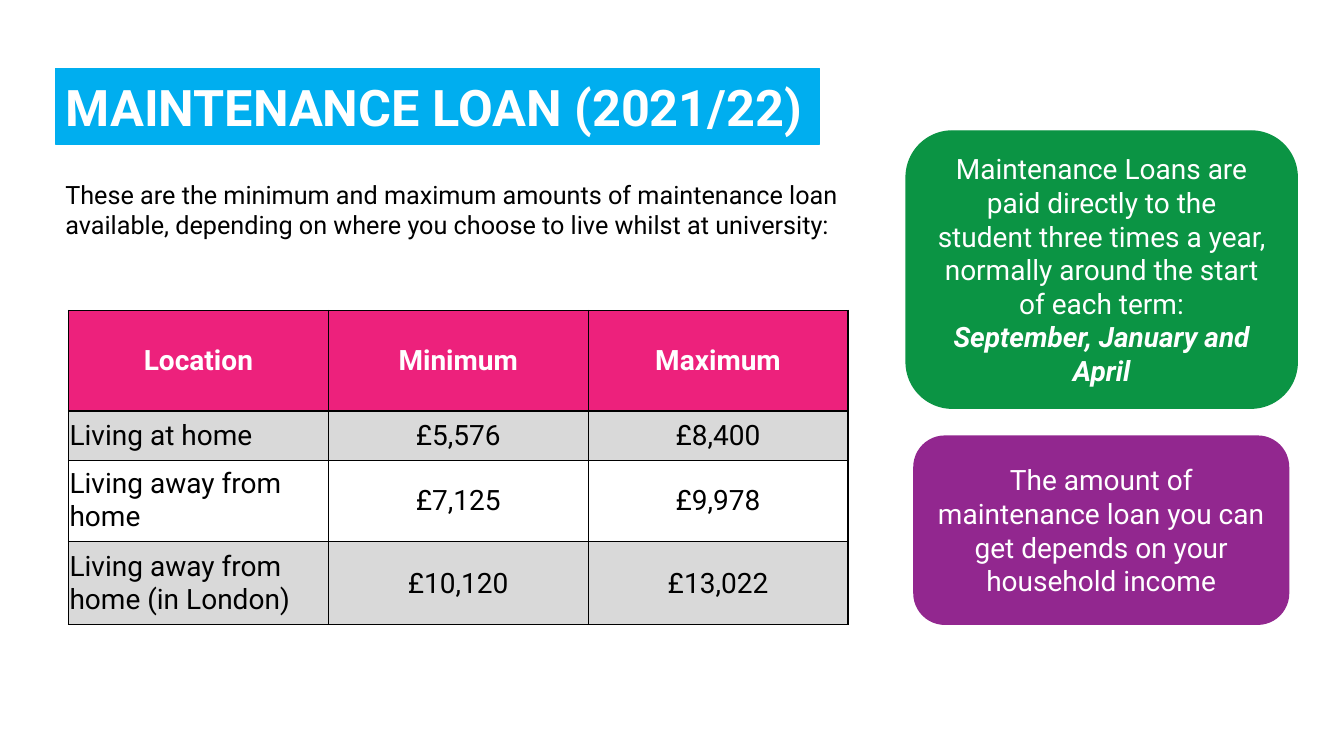
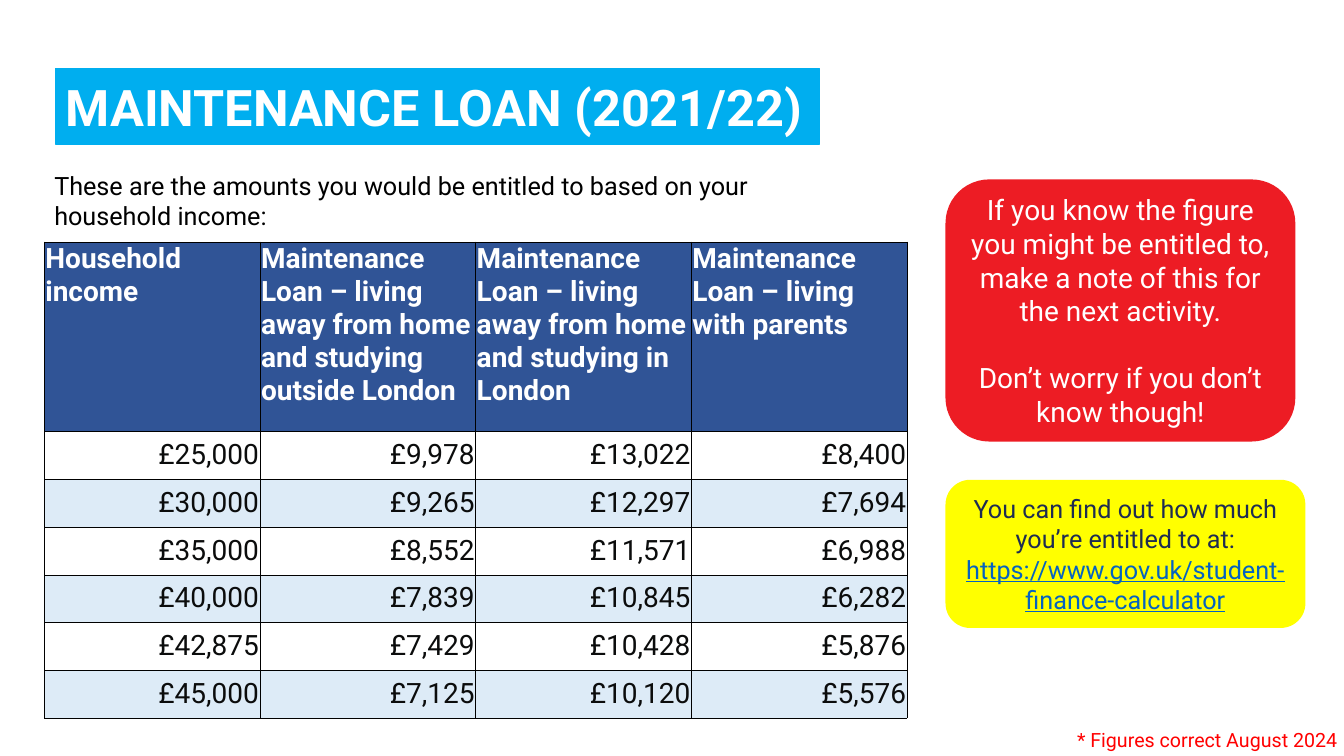
import lxml.etree
import pptx
import pptx.dml.color
import pptx.enum.shapes
import pptx.enum.text
import pptx.oxml.ns
import pptx.util

COLORS = {
    "title": "00AEEF", "green": "0B9444", "purple": "92278F", "red": "ED1C24",
    "yellow": "FFFF00", "pink": "ED217C", "grey": "D9D9D9", "navy": "305496",
    "ice": "DDEBF7", "white": "FFFFFF", "black": "000000", "ink": "0B0C0C",
    "deep": "1E2C52", "link": "0563C1", "alert": "FF0000",
}
FONT = "Roboto"
NO_BREAK_SPACE = chr(160)
SLIDE_W, SLIDE_H = pptx.util.Inches(13.33), pptx.util.Inches(7.5)
TITLE_BAND = (4.13, 9.07, 56.85, 10)
ALIGN = pptx.enum.text.PP_ALIGN
ANCHOR = pptx.enum.text.MSO_ANCHOR

LOAN_RANGES = [
    ("Location", "Minimum", "Maximum"),
    ("Living at home", "£5,576", "£8,400"),
    ("Living away from home", "£7,125", "£9,978"),
    ("Living away from home (in London)", "£10,120", "£13,022"),
]
INCOME_BANDS = [
    ("Household income",
     "Maintenance Loan – living away from home and studying outside London",
     "Maintenance Loan – living away from home and studying in London",
     "Maintenance Loan – living with parents"),
    ("£25,000", "£9,978", "£13,022", "£8,400"),
    ("£30,000", "£9,265", "£12,297", "£7,694"),
    ("£35,000", "£8,552", "£11,571", "£6,988"),
    ("£40,000", "£7,839", "£10,845", "£6,282"),
    ("£42,875", "£7,429", "£10,428", "£5,876"),
    ("£45,000", "£7,125", "£10,120", "£5,576"),
]


def rgb(name):
    """Return the named palette colour."""
    return pptx.dml.color.RGBColor.from_string(COLORS[name])


def place(box):
    """Turn a box in percent of the slide into lengths."""
    left, top, width, height = box
    return (int(SLIDE_W * left / 100), int(SLIDE_H * top / 100),
            int(SLIDE_W * width / 100), int(SLIDE_H * height / 100))


def write(frame, *lines, **shared):
    """Write lines, each a string or a (string, format) pair, into a text frame."""
    for index, line in enumerate(lines):
        text, own = (line, {}) if isinstance(line, str) else line
        style = {**shared, **own}
        paragraph = frame.paragraphs[0] if index == 0 else frame.add_paragraph()
        paragraph.alignment = style.get("align", ALIGN.LEFT)
        if "before" in style:
            paragraph.space_before = pptx.util.Pt(style["before"])
        run = paragraph.add_run()
        run.text = text
        run.font.name = FONT
        run.font.size = pptx.util.Pt(style.get("size", 20))
        run.font.color.rgb = rgb(style.get("color", "black"))
        run.font.bold = style.get("bold", False)
        run.font.italic = style.get("italic", False)
        run.font.underline = style.get("underline", False)


def paint(shape, color, outlined):
    """Fill a shape and give it a matching outline or none."""
    shape.fill.solid()
    shape.fill.fore_color.rgb = rgb(color)
    if outlined:
        shape.line.color.rgb = rgb(color)
        shape.line.width = pptx.util.Pt(1)
    else:
        shape.line.fill.background()


def add_titled_slide(deck, heading):
    """Add a slide with the heading in the shared title band."""
    slide = deck.slides.add_slide(deck.slide_layouts[5])
    title = slide.shapes.title
    title.left, title.top, title.width, title.height = place(TITLE_BAND)
    paint(title, "title", True)
    title.text_frame.auto_size = pptx.enum.text.MSO_AUTO_SIZE.NONE
    title.text_frame.vertical_anchor = ANCHOR.MIDDLE
    write(title.text_frame, heading, size=36, color="white", bold=True)
    return slide


def add_text(slide, box, text, right_margin=0.1, **style):
    """Add a wrapped text box."""
    frame = slide.shapes.add_textbox(*place(box)).text_frame
    frame.word_wrap = True
    frame.margin_right = pptx.util.Inches(right_margin)
    write(frame, text, **style)


def add_callout(slide, box, fill, *lines, outlined=False, **style):
    """Add a rounded callout with centred text."""
    callout = slide.shapes.add_shape(
        pptx.enum.shapes.MSO_SHAPE.ROUNDED_RECTANGLE, *place(box))
    callout.shadow.inherit = False
    paint(callout, fill, outlined)
    callout.text_frame.word_wrap = True
    callout.text_frame.vertical_anchor = ANCHOR.MIDDLE
    write(callout.text_frame, *lines, **{"align": ALIGN.CENTER, "color": "white", **style})


def add_borders(cell, points):
    """Draw black borders on all four sides of a cell."""
    properties = cell._tc.get_or_add_tcPr()
    qn = pptx.oxml.ns.qn
    for side in ("a:lnL", "a:lnR", "a:lnT", "a:lnB"):
        border = lxml.etree.SubElement(
            properties, qn(side), w=str(int(pptx.util.Pt(points))))
        fill = lxml.etree.SubElement(border, qn("a:solidFill"))
        lxml.etree.SubElement(fill, qn("a:srgbClr"), val=COLORS["black"])


def format_cell(cell, text, fill, border, anchor, padded, **style):
    """Set the borders, fill, margins and text of one cell."""
    add_borders(cell, border)
    cell.fill.solid()
    cell.fill.fore_color.rgb = rgb(fill)
    cell.vertical_anchor = anchor
    cell.margin_left = cell.margin_right = pptx.util.Inches(0.01)
    cell.margin_top = pptx.util.Inches(0.07 if padded else 0.01)
    cell.margin_bottom = pptx.util.Inches(0.07 if padded else 0)
    write(cell.text_frame, text, **style)


def add_loan_table(slide, box, rows, weights, header, bands, aligns, head_align,
                   anchor, border, ink):
    """Add a table whose rows share the box height by weight."""
    left, top, width, height = place(box)
    columns = len(rows[0])
    table = slide.shapes.add_table(len(rows), columns, left, top, width, height).table
    table.horz_banding = False
    for column in table.columns:
        column.width = width // columns
    for r, (values, weight) in enumerate(zip(rows, weights)):
        table.rows[r].height = int(height * weight / sum(weights))
        for c, value in enumerate(values):
            is_head = r == 0
            align = head_align if is_head else aligns[c]
            format_cell(table.cell(r, c), value,
                        header if is_head else bands[(r - 1) % 2], border, anchor,
                        padded=not is_head and align != ALIGN.CENTER,
                        align=align, bold=is_head, color="white" if is_head else ink)


def build_range_slide(deck):
    """Build the slide of minimum and maximum loans."""
    slide = add_titled_slide(deck, "MAINTENANCE LOAN (2021/22)")
    add_callout(
        slide, (67.42, 17.33, 29.1, 36.67), "green",
        f"Maintenance Loans are paid directly to the student{NO_BREAK_SPACE}three "
        "times a year, normally around the start of each term:",
        ("September, January and April", {"bold": True, "italic": True}),
        outlined=True)
    add_text(slide, (4.13, 23.07, 60.08, 9.47),
             "These are the minimum and maximum amounts of maintenance loan available, "
             "depending on where you choose to live whilst at university:", size=18)
    add_callout(slide, (67.95, 57.6, 27.98, 25.07), "purple",
                "The amount of maintenance loan you can get depends on your "
                "household income")
    add_loan_table(slide, (5.1, 41.07, 58, 41.6), LOAN_RANGES, (1, 0.49, 0.81, 0.83),
                   "pink", ("grey", "white"), (ALIGN.LEFT, ALIGN.CENTER, ALIGN.CENTER),
                   ALIGN.CENTER, ANCHOR.MIDDLE, 1, "black")


def build_income_slide(deck):
    """Build the slide of loans by household income."""
    slide = add_titled_slide(deck, "MAINTENANCE LOAN (2021/22)")
    add_text(slide, (3.3, 21.87, 56.48, 9.47),
             "These are the amounts you would be entitled to based on your "
             "household income:", size=18)
    add_callout(
        slide, (70.35, 23.73, 26.03, 34.67), "red",
        "If you know the figure you might be entitled to, make a note of this for "
        "the next activity.",
        ("Don’t worry if you don’t know though!", {"before": 24}))
    add_callout(
        slide, (70.35, 63.47, 26.78, 19.6), "yellow",
        "You can find out how much you’re entitled to at:",
        ("https://www.gov.uk/student-finance-calculator",
         {"color": "link", "underline": True}),
        size=18, color="deep")
    add_loan_table(slide, (3.3, 32, 64.2, 62.8), INCOME_BANDS, (4,) + (1,) * 6,
                   "navy", ("white", "ice"), (ALIGN.RIGHT,) * 4,
                   ALIGN.LEFT, ANCHOR.TOP, 0.5, "ink")
    add_text(slide, (79.4, 95.6, 20.6, 4.4), "* Figures correct August 2024",
             right_margin=0, size=14, color="alert")


def main():
    """Build and save the deck."""
    deck = pptx.Presentation()
    deck.slide_width, deck.slide_height = SLIDE_W, SLIDE_H
    build_range_slide(deck)
    build_income_slide(deck)
    deck.save("out.pptx")


if __name__ == "__main__":
    main()
